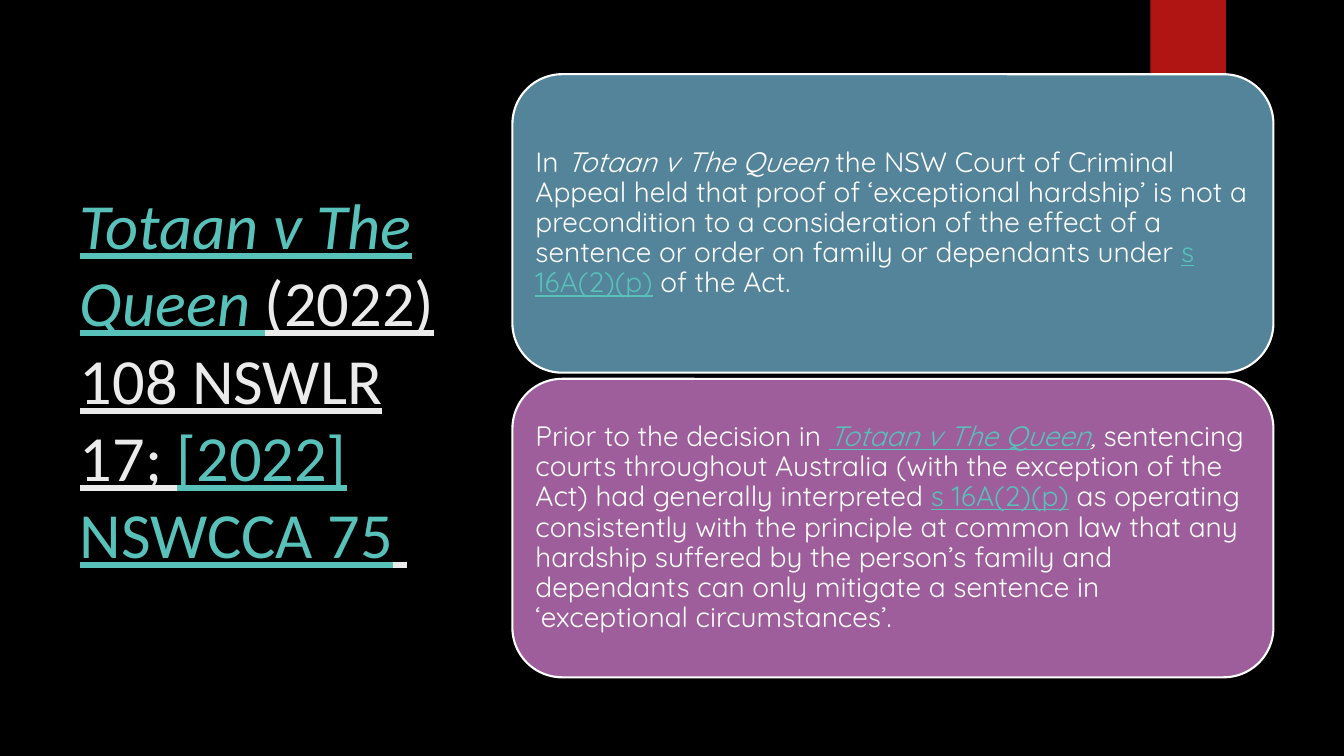
from pptx import Presentation
from pptx.dml.color import RGBColor
from pptx.enum.shapes import MSO_SHAPE
from pptx.enum.text import MSO_ANCHOR, PP_ALIGN
from pptx.util import Pt

WHITE, PALE, TEAL = "FFFFFF", "EBEBEB", "58C1BA"


def rgb(value):
    return RGBColor.from_string(value)


def add_runs(p, runs, font, size):
    """Add (text, colour, style) runs; style may hold i for italic and u for underline."""
    for text, colour, style in runs:
        r = p.add_run()
        r.text = text
        r.font.name = font
        r.font.size = Pt(size)
        r.font.color.rgb = rgb(colour)
        r.font.italic = "i" in style
        r.font.underline = "u" in style


prs = Presentation()
prs.slide_width, prs.slide_height = Pt(960), Pt(540)
s = prs.slides.add_slide(prs.slide_layouts[6])
s.background.fill.solid()
s.background.fill.fore_color.rgb = rgb("000000")

# Red tab at the top edge
tab = s.shapes.add_shape(MSO_SHAPE.RECTANGLE, Pt(821.7), Pt(0), Pt(54), Pt(90))
tab.shadow.inherit = False
tab.fill.solid()
tab.fill.fore_color.rgb = rgb("B01513")
tab.line.fill.background()

# Case citation
title = s.shapes.add_textbox(Pt(50), Pt(50.4), Pt(269), Pt(440))
tf = title.text_frame
tf.word_wrap = True
tf.vertical_anchor = MSO_ANCHOR.MIDDLE
add_runs(tf.paragraphs[0], [
    ("Totaan v The Queen ", TEAL, "iu"),
    ("(2022) 108 NSWLR 17; ", PALE, "u"),
    ("[2022] NSWCCA 75", TEAL, "u"),
    (" ", PALE, "u"),
], "Calibri", 46)

# Cards: the decision and the earlier position
cards = [
    ("54849A", [
        ("In ", WHITE, ""),
        ("Totaan v The Queen ", WHITE, "i"),
        ("the NSW Court of Criminal Appeal held that proof of ‘exceptional hardship’ "
         "is not a precondition to a consideration of the effect of a sentence or order "
         "on family or dependants under ", WHITE, ""),
        ("s 16A(2)(p)", TEAL, "u"),
        (" of the Act.", WHITE, ""),
    ]),
    ("9E5E9B", [
        ("Prior to the decision in ", WHITE, ""),
        ("Totaan v The Queen", TEAL, "iu"),
        (", ", WHITE, "i"),
        ("sentencing courts throughout Australia (with the exception of the Act) "
         "had generally interpreted ", WHITE, ""),
        ("s 16A(2)(p)", TEAL, "u"),
        (" as operating consistently with the principle at common law that any "
         "hardship suffered by the person’s family and dependants can only mitigate "
         "a sentence in ‘exceptional circumstances’.", WHITE, ""),
    ]),
]
for i, (fill, runs) in enumerate(cards):
    card = s.shapes.add_shape(MSO_SHAPE.ROUNDED_RECTANGLE,
                              Pt(366), Pt(53 + 217.6 * i), Pt(543.6), Pt(213.2))
    card.shadow.inherit = False
    card.fill.solid()
    card.fill.fore_color.rgb = rgb(fill)
    card.line.color.rgb = rgb(WHITE)
    card.line.width = Pt(1.5)
    tf = card.text_frame
    tf.word_wrap = True
    tf.vertical_anchor = MSO_ANCHOR.MIDDLE
    tf.margin_left = tf.margin_right = tf.margin_top = tf.margin_bottom = Pt(6)
    p = tf.paragraphs[0]
    p.alignment = PP_ALIGN.LEFT
    p.line_spacing = 0.9
    add_runs(p, runs, "Quicksand", 20)

prs.save("out.pptx")
